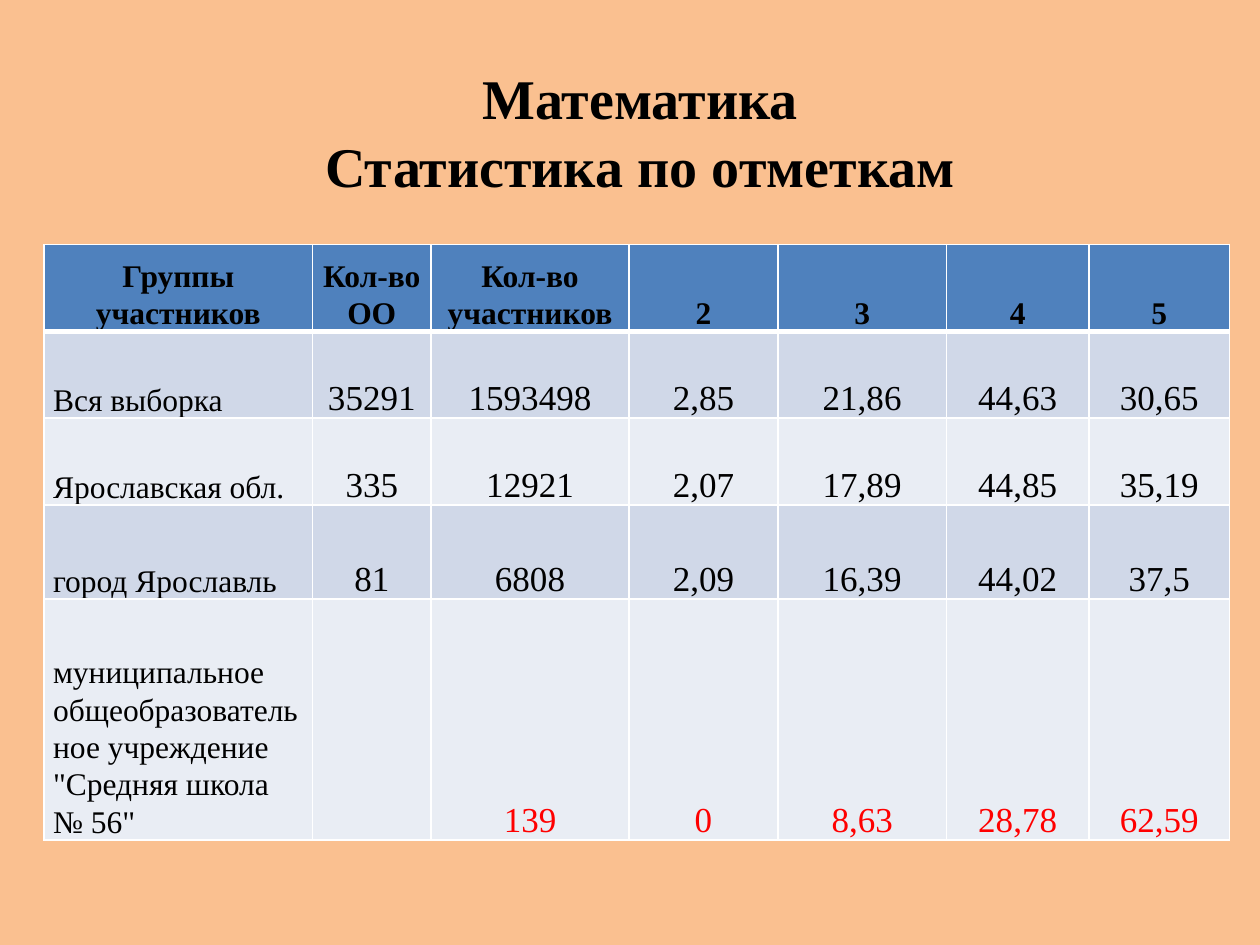
from dataclasses import dataclass

from lxml import etree
from pptx import Presentation
from pptx.dml.color import RGBColor
from pptx.enum.text import MSO_ANCHOR, PP_ALIGN
from pptx.oxml.ns import qn
from pptx.util import Cm, Pt

LEFT, CENTER = PP_ALIGN.LEFT, PP_ALIGN.CENTER
MIDDLE, BOTTOM = MSO_ANCHOR.MIDDLE, MSO_ANCHOR.BOTTOM

PEACH = RGBColor(0xFA, 0xC0, 0x90)
BLUE = RGBColor(0x4F, 0x81, 0xBD)
DARK_BAND = RGBColor(0xD0, 0xD8, 0xE8)
LIGHT_BAND = RGBColor(0xE9, 0xED, 0xF4)
WHITE = RGBColor(0xFF, 0xFF, 0xFF)
BLACK = RGBColor(0x00, 0x00, 0x00)
RED = RGBColor(0xFF, 0x00, 0x00)

FONT = "Times New Roman"
COLUMN_WIDTHS = (5.41, 2.39, 3.99, 3.0, 3.4, 2.87, 2.84)


@dataclass
class Row:
    height: float
    fill: RGBColor
    texts: tuple
    value_color: RGBColor = BLACK
    is_header: bool = False


ROWS = (
    Row(1.75, BLUE, ("Группы участников", "Кол-во ОО", "Кол-во участников",
                     "2", "3", "4", "5"), is_header=True),
    Row(1.75, DARK_BAND, ("Вся выборка", "35291", "1593498",
                          "2,85", "21,86", "44,63", "30,65")),
    Row(1.75, LIGHT_BAND, ("Ярославская обл.", "335", "12921",
                           "2,07", "17,89", "44,85", "35,19")),
    Row(1.9, DARK_BAND, ("город Ярославль", "81", "6808",
                         "2,09", "16,39", "44,02", "37,5")),
    Row(4.85, LIGHT_BAND,
        ('муниципальное общеобразовательное учреждение "Средняя школа № 56"',
         "", "139", "0", "8,63", "28,78", "62,59"), RED),
)


def add_run(paragraph, text: str, size: float, color: RGBColor, bold: bool) -> None:
    run = paragraph.add_run()
    run.text = text
    run.font.name = FONT
    run.font.size = Pt(size)
    run.font.bold = bold
    run.font.color.rgb = color


def set_borders(cell, bottom_width: float) -> None:
    properties = cell._tc.get_or_add_tcPr()
    widths = {"a:lnL": 1, "a:lnR": 1, "a:lnT": 1, "a:lnB": bottom_width}
    for position, (tag, width) in enumerate(widths.items()):
        line = etree.Element(qn(tag), w=str(Pt(width)))
        fill = etree.SubElement(line, qn("a:solidFill"))
        etree.SubElement(fill, qn("a:srgbClr"), val=str(WHITE))
        properties.insert(position, line)


def fill_cell(cell, row: Row, column: int) -> None:
    is_label = column == 0 and not row.is_header
    cell.fill.solid()
    cell.fill.fore_color.rgb = row.fill
    set_borders(cell, 3 if row.is_header else 1)
    cell.vertical_anchor = BOTTOM
    cell.margin_left = cell.margin_right = Cm(0.18)
    cell.margin_top = cell.margin_bottom = 0
    text = row.texts[column]
    if text:
        paragraph = cell.text_frame.paragraphs[0]
        paragraph.alignment = LEFT if is_label else CENTER
        paragraph.line_spacing = 1.07
        size = 18 if is_label or row.is_header else 20
        color = BLACK if is_label else row.value_color
        add_run(paragraph, text, size, color, row.is_header)


def add_title(slide) -> None:
    title = slide.shapes.title
    title.left, title.top = Cm(0.84), Cm(0.74)
    title.width, title.height = Cm(24.13), Cm(3.81)
    title.text_frame.vertical_anchor = MIDDLE
    paragraph = title.text_frame.paragraphs[0]
    paragraph.alignment = CENTER
    add_run(paragraph, "Математика", 32, BLACK, True)
    paragraph.add_line_break()
    add_run(paragraph, "Статистика по отметкам", 32, BLACK, True)


def add_marks_table(slide) -> None:
    total_height = sum(row.height for row in ROWS)
    table = slide.shapes.add_table(
        len(ROWS), len(COLUMN_WIDTHS), Cm(0.89), Cm(4.93),
        Cm(sum(COLUMN_WIDTHS)), Cm(total_height)).table
    for column, width in zip(table.columns, COLUMN_WIDTHS):
        column.width = Cm(width)
    for row_index, row in enumerate(ROWS):
        table.rows[row_index].height = Cm(row.height)
        for column_index in range(len(COLUMN_WIDTHS)):
            fill_cell(table.cell(row_index, column_index), row, column_index)


def main() -> None:
    presentation = Presentation()
    presentation.slide_width, presentation.slide_height = Cm(25.4), Cm(19.05)
    slide = presentation.slides.add_slide(presentation.slide_layouts[5])

    # Background
    slide.background.fill.solid()
    slide.background.fill.fore_color.rgb = PEACH

    # Title and table of marks
    add_title(slide)
    add_marks_table(slide)
    presentation.save("out.pptx")


if __name__ == "__main__":
    main()
